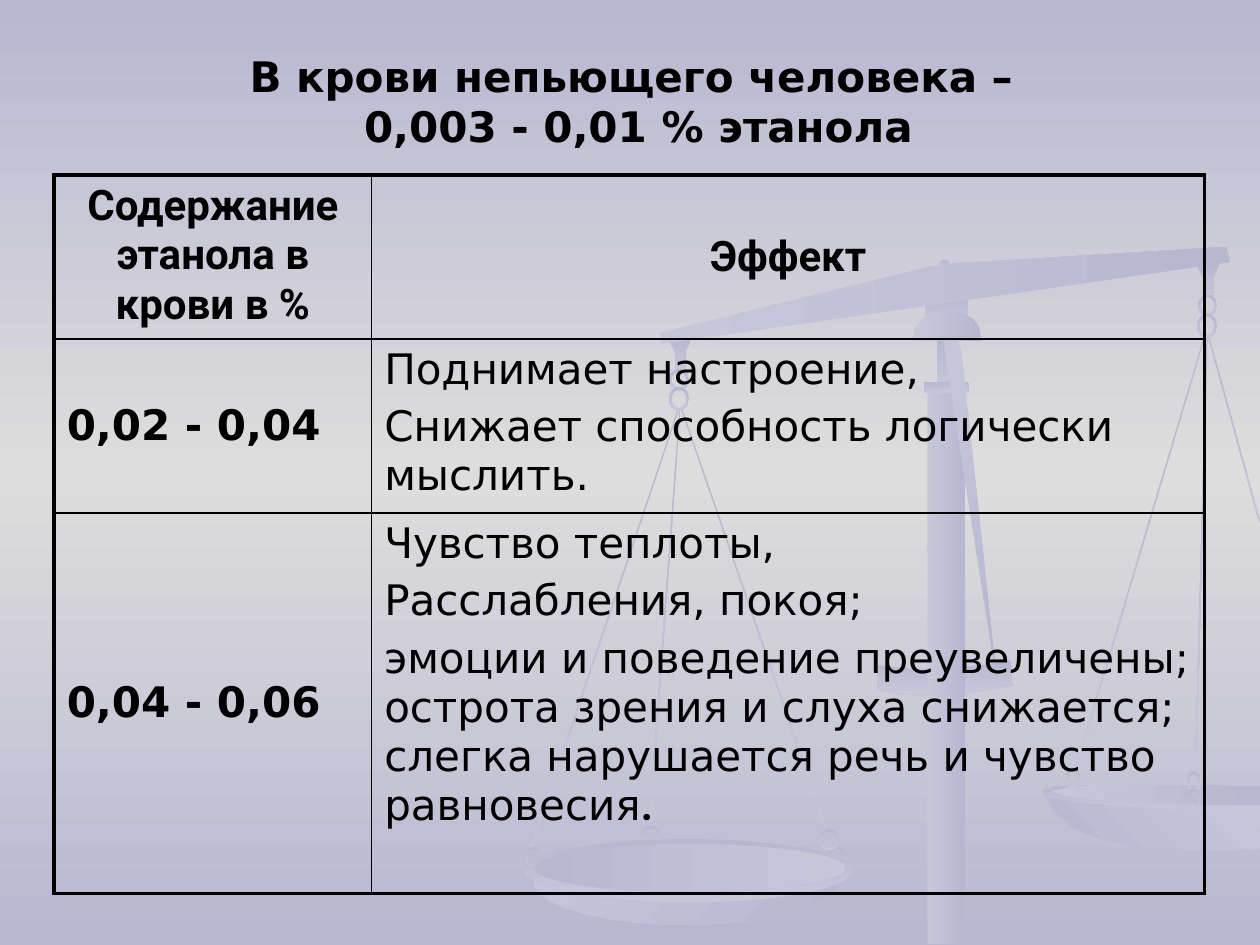
import copy
import math
import pptx
import pptx.dml.color
import pptx.enum.shapes
import pptx.enum.text
import pptx.oxml
import pptx.oxml.ns
import pptx.util
from pptx.util import Inches

DARK, LIGHT, BLACK = "B8B7D1", "C7C7DA", "000000"
KIND = pptx.enum.shapes.MSO_SHAPE
ALIGN = pptx.enum.text.PP_ALIGN
ANCHOR = pptx.enum.text.MSO_ANCHOR


def hue(code):
    return pptx.dml.color.RGBColor.from_string(code)


def blend(fill, codes, angle):
    """Spread the colours evenly along a clockwise angle."""
    for n, (stop, code) in enumerate(zip(fill.gradient_stops, codes)):
        stop.color.rgb = hue(code)
        stop.position = n / (len(codes) - 1)
    fill.gradient_angle = (360 - angle) % 360


deck = pptx.Presentation()
deck.slide_width, deck.slide_height = Inches(10), Inches(7.5)
slide = deck.slides.add_slide(deck.slide_layouts[6])

# Background with a third colour stop
back = slide.background.fill
back.gradient()
stops = slide.element.find(".//" + pptx.oxml.ns.qn("a:gsLst"))
stops.append(copy.deepcopy(stops[-1]))
blend(back, [DARK, "DDDDDD", DARK], 90)

# Scales, back to front: kind, box or points, angle, light first, turn
DOWN = (90, False, 0)
ACROSS = (0, True, 0)
BOX, OVAL, ROUND = KIND.RECTANGLE, KIND.OVAL, KIND.ROUNDED_RECTANGLE
collar = [(6.97, 5.28), (7.24, 5.31), (7.39, 5.31), (7.57, 5.3), (7.78, 5.28),
          (8.02, 5.24), (8.04, 5.44), (7.82, 5.48), (7.68, 5.51), (7.51, 5.52),
          (7.33, 5.52), (7.14, 5.51), (6.96, 5.47)]
rim = [(9.58, 6.24), (8.75, 6.23), (8.36, 6.24), (8.28, 6.27), (8.27, 6.28),
       (8.32, 6.33), (8.52, 6.38), (8.78, 6.41), (9.14, 6.44), (9.58, 6.45),
       (10, 6.45), (10, 6.26), (9.8, 6.26)]
bowl = [(8.31, 6.33), (8.35, 6.42), (8.42, 6.49), (8.52, 6.57), (8.65, 6.63),
        (8.82, 6.68), (9.03, 6.72), (9.28, 6.74), (9.57, 6.75), (9.8, 6.75),
        (10, 6.74), (10, 6.43), (9.53, 6.43), (9.18, 6.42), (8.86, 6.4),
        (8.57, 6.37)]
inside = [(9.56, 6.23), (8.69, 6.23), (8.43, 6.26), (8.34, 6.28), (8.43, 6.31),
          (8.63, 6.34), (8.93, 6.37), (9.33, 6.38), (9.78, 6.39), (10, 6.39),
          (10, 6.24), (9.79, 6.24)]
beam = [(9.73, 1.96), (9.76, 2.08), (5.25, 2.73), (5.24, 2.64), (7.37, 2.12),
        (7.59, 2.09)]
strut = [(7.91, 5.39), (7.5, 2.8), (7.5, 2.76), (7.48, 2.68), (7.6, 2.65),
         (7.61, 2.74), (7.63, 2.77)]
dome = [(7.52, 2.47), (7.63, 2.48), (7.72, 2.53), (7.77, 2.6), (7.79, 2.71),
        (7.24, 2.71), (7.26, 2.6), (7.32, 2.53), (7.4, 2.48)]
hook = [(0.18, 0), (0, 0.02), (0.05, 0.12), (0.05, 0.27), (0.13, 0.27),
        (0.13, 0.12)]
left, right = [[(x + dx, y + dy) for dx, dy in hook]
               for x, y in [(5.31, 2.68), (9.5, 2.09)]]
cords = [(BOX, (x, y, 0.01, tall), 90, False, turn) for x, y, tall, turn in [
    (9.04, 2.6, 3.6, 16.6), (9.53, 2.66, 3.47, 1.5), (9.79, 2.64, 1.53, 344.6),
    (5.98, 3.15, 3.53, 341), (4.79, 3.16, 3.68, 18.6), (5.27, 3.25, 3.31, 4.2)]]
rings = [("ring", box, *DOWN) for box in [
    (8.46, 6.09, 0.11, 0.17), (5.31, 2.93, 0.16, 0.17), (5.31, 3.07, 0.16, 0.19),
    (9.51, 2.34, 0.15, 0.17), (9.5, 2.49, 0.16, 0.19), (9.42, 6.12, 0.11, 0.17),
    (5.09, 6.55, 0.15, 0.16), (6.56, 6.72, 0.16, 0.19), (4.17, 6.72, 0.12, 0.16)]]
parts = [
    (BOX, (7.34, 2.37, 0.34, 0.18), *DOWN),
    (OVAL, (7.46, 2.06, 0.08, 0.08), *DOWN),
    *cords,
    ("free", collar, *DOWN),
    ("free", rim, *DOWN),
    ("free", bowl, 315, False, 0),
    ("free", inside, *ACROSS),
    ("free", left, *DOWN),
    ("free", right, *DOWN),
    *rings,
    ("free", beam, *ACROSS),
    (OVAL, (4.24, 6.66, 2.4, 0.68), 45, True, 0),
    (OVAL, (4.16, 6.66, 2.61, 0.5), *DOWN),
    (OVAL, (4.24, 6.7, 2.47, 0.38), 0, False, 0),
    ("ring", (6.5, 6.58, 0.16, 0.17), *DOWN),
    ("ring", (9.41, 6.26, 0.12, 0.19), *DOWN),
    (BOX, (7.36, 3.08, 0.3, 4.41), *ACROSS),
    (BOX, (7.44, 2.68, 0.13, 0.42), *DOWN),
    (ROUND, (7.33, 3.03, 0.36, 0.09), *DOWN),
    ("free", strut, 45, True, 0),
    ("free", dome, *ACROSS),
]
for kind, place, angle, bright, turn in parts:
    if kind in ("free", "ring"):
        loops = [place]
        if kind == "ring":
            # Outer oval, then the hole drawn the other way round
            x, y, wide, tall = place
            loops = [[(x + wide / 2 + (wide / 2 - inset) * math.cos(way * n * math.pi / 8),
                       y + tall / 2 + (tall / 2 - inset) * math.sin(way * n * math.pi / 8))
                      for n in range(16)] for inset, way in [(0, 1), (0.02, -1)]]
        loops = [[(Inches(x), Inches(y)) for x, y in points] for points in loops]
        pen = shape = slide.shapes.build_freeform(*loops[0][0])
        pen.add_line_segments(loops[0][1:])
        for points in loops[1:]:
            pen.move_to(*points[0])
            pen.add_line_segments(points[1:])
        shape = pen.convert_to_shape()
    else:
        shape = slide.shapes.add_shape(kind, *map(Inches, place))
    shape.rotation = turn
    shape.shadow.inherit = False
    shape.line.fill.background()
    shape.fill.gradient()
    blend(shape.fill, [LIGHT, DARK] if bright else [DARK, LIGHT], angle)

# Title box
title = slide.shapes.add_textbox(*map(Inches, (0.52, 0.39, 8.98, 0.82))).text_frame
title.word_wrap = True
title.vertical_anchor = ANCHOR.MIDDLE

# Table grid
wides, talls = [2.52, 6.61], [1.3, 1.38, 3.02]
table = slide.shapes.add_table(
    3, 2, *map(Inches, (0.43, 1.39, sum(wides), sum(talls)))).table
table.first_row = table.horz_banding = False
for col, wide in zip(table.columns, wides):
    col.width = Inches(wide)
for row, tall in zip(table.rows, talls):
    row.height = Inches(tall)

# Cell borders: thick outside, thin inside
for r in range(3):
    for c in range(2):
        cell = table.cell(r, c)
        sides = {"L": c == 0, "R": c == 1, "T": r == 0, "B": r == 2}
        for side, outer in sides.items():
            width = pptx.util.Pt(2.25 if outer else 1)
            cell._tc.get_or_add_tcPr().append(pptx.oxml.parse_xml(
                f'<a:ln{side} {pptx.oxml.ns.nsdecls("a")} w="{width}"><a:solidFill>'
                f'<a:srgbClr val="{BLACK}"/></a:solidFill></a:ln{side}>'))
        cell.fill.background()
        if c == 0 and r > 0 or c == 1 and r == 0:
            cell.vertical_anchor = ANCHOR.MIDDLE

# Text: frame, alignment, space before, paragraphs of (text, look)
plain = {"name": "DejaVu Sans", "size": pptx.util.Pt(24), "bold": False}
strong = {**plain, "bold": True}
head = {**strong, "name": "Roboto"}
MID, SIDE = ALIGN.CENTER, ALIGN.LEFT
texts = [
    (title, MID, 0, [[("В крови непьющего человека –\v 0,003 - 0,01 % этанола", strong)]]),
    (table.cell(0, 0).text_frame, MID, 5, [[("Содержание этанола в крови в %", head)]]),
    (table.cell(0, 1).text_frame, MID, 5, [[("Эффект", head)]]),
    (table.cell(1, 0).text_frame, SIDE, 5, [[("0,02 - 0,04", strong)]]),
    (table.cell(1, 1).text_frame, SIDE, 5, [
        [("Поднимает настроение,", plain)],
        [("Снижает способность логически мыслить.", plain)]]),
    (table.cell(2, 0).text_frame, SIDE, 5, [[("0,04 - 0,06", strong)]]),
    (table.cell(2, 1).text_frame, SIDE, 5, [
        [("Чувство теплоты,", plain)],
        [("Расслабления, покоя;", plain)],
        [("эмоции и поведение преувеличены; острота зрения и слуха снижается; "
          "слегка нарушается речь и чувство равновесия", plain), (".", head)]]),
]
for frame, align, gap, paras in texts:
    for n, runs in enumerate(paras):
        para = frame.add_paragraph() if n else frame.paragraphs[0]
        para.alignment = align
        para.space_before = pptx.util.Pt(gap)
        for words, look in runs:
            for n_line, line in enumerate(words.split("\v")):
                if n_line:
                    para.add_line_break()
                run = para.add_run()
                run.text = line
                run.font.color.rgb = hue(BLACK)
                for key, value in look.items():
                    setattr(run.font, key, value)

deck.save("out.pptx")
